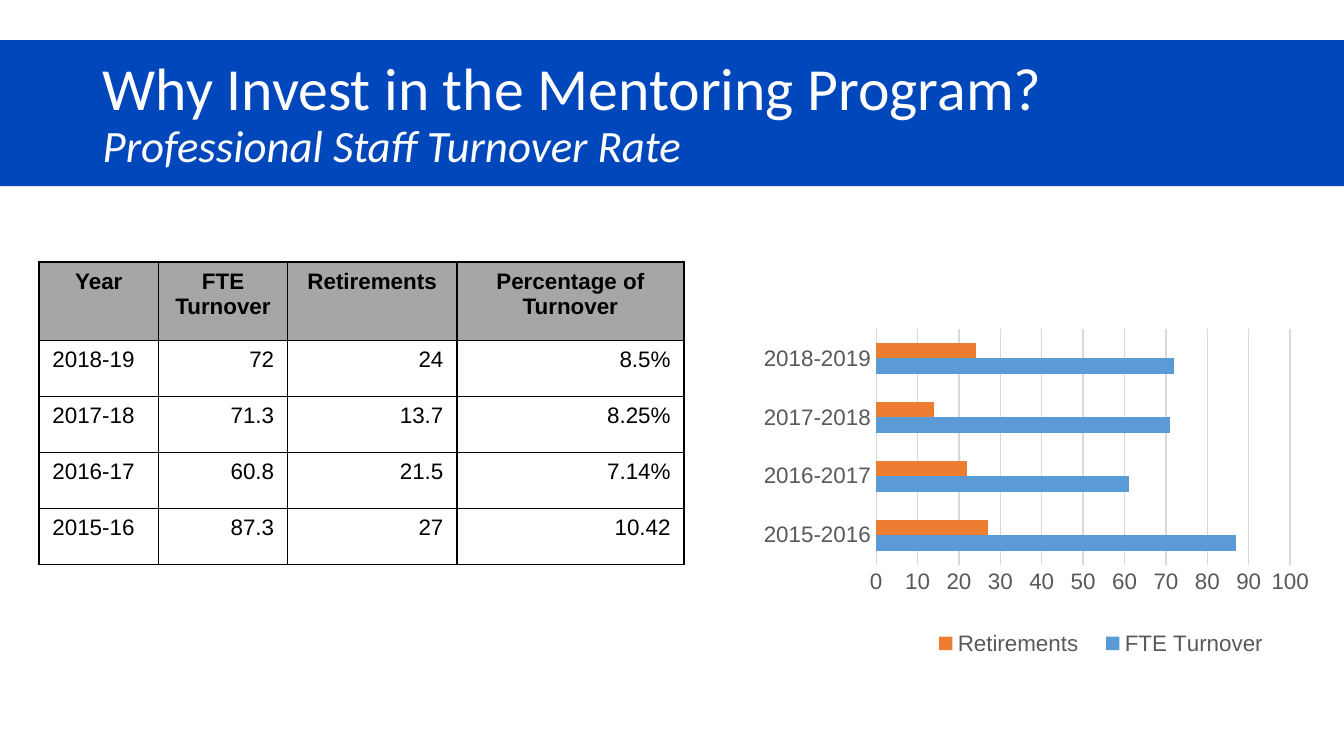
from pptx import Presentation
from pptx.chart.data import CategoryChartData
from pptx.dml.color import RGBColor
from pptx.enum.chart import XL_CHART_TYPE, XL_LEGEND_POSITION, XL_TICK_MARK
from pptx.enum.shapes import MSO_SHAPE
from pptx.enum.text import MSO_ANCHOR, PP_ALIGN
from pptx.oxml import parse_xml
from pptx.oxml.ns import nsdecls, qn
from pptx.util import Pt


def style_font(font, size, color, name="Arial"):
    font.size, font.name = Pt(size), name
    font.color.rgb = RGBColor.from_string(color)


def manual_layout(x, y, w, h, inner=False):
    """Return a c:layout element placed in fractions of the chart area."""
    target = '<c:layoutTarget val="inner"/>' if inner else ""
    return parse_xml(
        f'<c:layout {nsdecls("c")}><c:manualLayout>{target}'
        '<c:xMode val="edge"/><c:yMode val="edge"/>'
        f'<c:x val="{x}"/><c:y val="{y}"/><c:w val="{w}"/><c:h val="{h}"/>'
        "</c:manualLayout></c:layout>")


prs = Presentation()
prs.slide_width, prs.slide_height = Pt(720), Pt(405)
slide = prs.slides.add_slide(prs.slide_layouts[5])

# Title on its blue band
title = slide.shapes.title
title.left, title.top, title.width, title.height = Pt(50), Pt(24), Pt(620), Pt(76)
band = slide.shapes.add_shape(MSO_SHAPE.RECTANGLE, 0, Pt(21.5), Pt(720), Pt(78.2))
band.shadow.inherit = False
band.fill.solid()
band.fill.fore_color.rgb = RGBColor.from_string("0047BB")
band.line.fill.background()
title._element.addprevious(band._element)

heading = title.text_frame
heading.word_wrap = True
heading.vertical_anchor = MSO_ANCHOR.MIDDLE
heading.margin_left = heading.margin_right = Pt(5)
heading.margin_top = heading.margin_bottom = Pt(5)
heading.text = "Why Invest in the Mentoring Program?\vProfessional Staff Turnover Rate"
heading_line = heading.paragraphs[0]
heading_line.alignment = PP_ALIGN.LEFT
heading_line.line_spacing = 0.9
question, subtitle = heading_line.runs
style_font(question.font, 32, "FFFFFF", "Calibri")
style_font(subtitle.font, 24, "FFFFFF", "Calibri")
subtitle.font.italic = True
line_break = heading_line._p.find(qn("a:br"))
line_break.append(parse_xml(f'<a:rPr {nsdecls("a")} sz="3200"/>'))

# Turnover table
headers = ["Year", "FTE Turnover", "Retirements", "Percentage of Turnover"]
turnover = [
    ["2018-19", "72", "24", "8.5%"],
    ["2017-18", "71.3", "13.7", "8.25%"],
    ["2016-17", "60.8", "21.5", "7.14%"],
    ["2015-16", "87.3", "27", "10.42"],
]
table = slide.shapes.add_table(5, 4, Pt(20.9), Pt(140.4), Pt(345.6), Pt(162)).table
table.first_row = table.horz_banding = False
for column, width in zip(table.columns, [64.1, 69.1, 90.7, 121.7]):
    column.width = Pt(width)
for row, height in zip(table.rows, [42, 30, 30, 30, 30]):
    row.height = Pt(height)

for r, values in enumerate([headers] + turnover):
    for c, value in enumerate(values):
        cell = table.cell(r, c)
        cell.text = value
        paragraph = cell.text_frame.paragraphs[0]
        style_font(paragraph.runs[0].font, 12, "000000")
        paragraph.runs[0].font.bold = r == 0
        for side in ("lnL", "lnR", "lnT", "lnB"):
            cell._tc.get_or_add_tcPr().append(parse_xml(
                f'<a:{side} {nsdecls("a")} w="12700"><a:solidFill>'
                f'<a:srgbClr val="000000"/></a:solidFill></a:{side}>'))
        if r == 0:
            paragraph.alignment = PP_ALIGN.CENTER
            cell.fill.solid()
            cell.fill.fore_color.rgb = RGBColor.from_string("A6A6A6")
        else:
            paragraph.alignment = PP_ALIGN.RIGHT if c else PP_ALIGN.LEFT
            cell.fill.background()

# Bar chart of the same figures in whole numbers, oldest year first
oldest_first = turnover[::-1]
chart_data = CategoryChartData()
chart_data.categories = [year.replace("-", "-20") for year, *_ in oldest_first]
for c in (1, 2):
    chart_data.add_series(headers[c], [round(float(values[c])) for values in oldest_first])
chart = slide.shapes.add_chart(XL_CHART_TYPE.BAR_CLUSTERED, Pt(347), Pt(136.5),
                               Pt(382.5), Pt(234), chart_data).chart
style_font(chart.font, 10, "000000")
chart.has_title = False

bars = chart.plots[0]
bars.gap_width, bars.overlap = 182, 0
bars.vary_by_categories = False
for series, color in zip(bars.series, ["5B9BD5", "ED7D31"]):
    series.format.fill.solid()
    series.format.fill.fore_color.rgb = RGBColor.from_string(color)

years, staff = chart.category_axis, chart.value_axis
for axis in (years, staff):
    axis.major_tick_mark = axis.minor_tick_mark = XL_TICK_MARK.NONE
    style_font(axis.tick_labels.font, 12, "595959")
staff.minimum_scale, staff.maximum_scale, staff.major_unit = 0, 100, 10
staff.has_major_gridlines = True
staff.format.line.fill.background()
for line in (years.format.line, staff.major_gridlines.format.line):
    line.color.rgb = RGBColor.from_string("D9D9D9")
    line.width = Pt(0.75)

chart.has_legend = True
legend = chart.legend
legend.position = XL_LEGEND_POSITION.BOTTOM
legend.include_in_layout = False
style_font(legend.font, 12, "595959")
legend._element.find(qn("c:legendPos")).addnext(manual_layout(0.38, 0.84, 0.51, 0.1))

plot_area = chart._chartSpace.chart.plotArea
for old_layout in plot_area.findall(qn("c:layout")):
    plot_area.remove(old_layout)
plot_area.insert(0, manual_layout(0.32, 0.17, 0.58, 0.54, inner=True))

prs.save("out.pptx")
